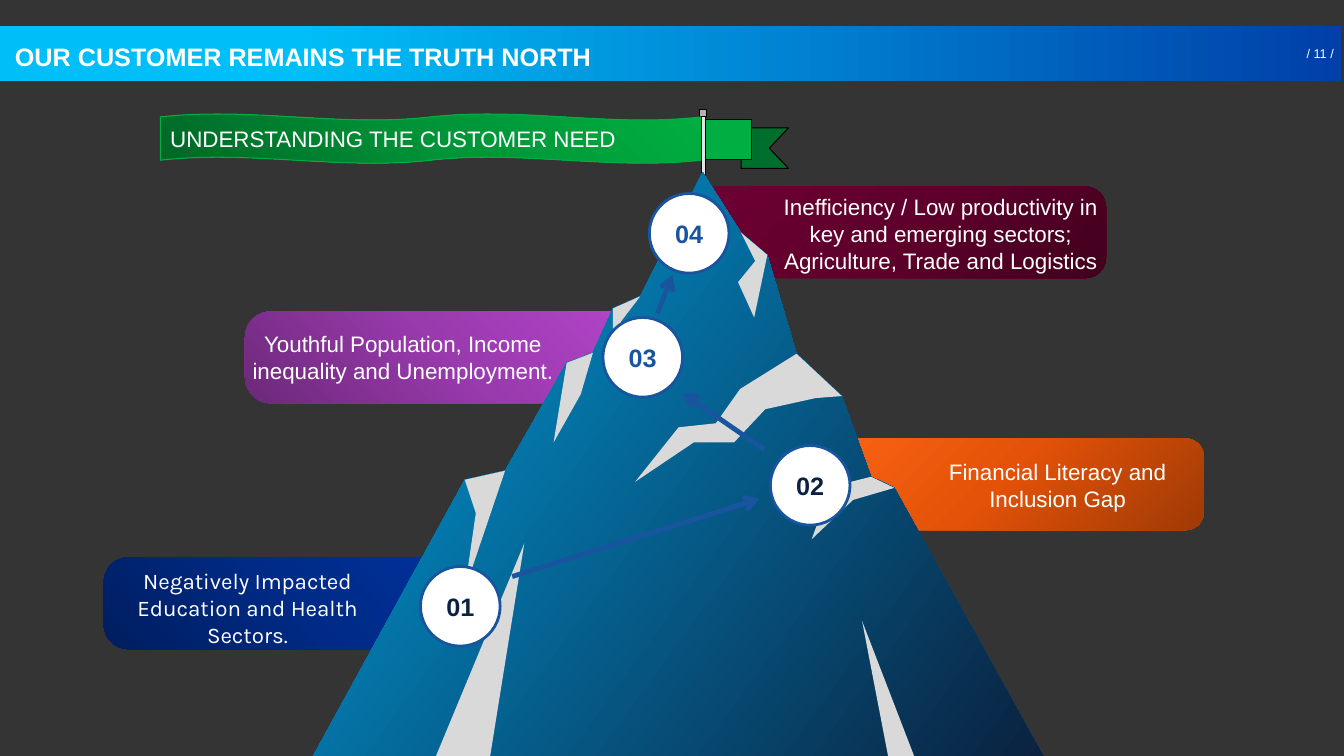
from dataclasses import dataclass

from lxml import etree
from pptx import Presentation
from pptx.dml.color import RGBColor
from pptx.enum.shapes import MSO_CONNECTOR, MSO_SHAPE
from pptx.enum.text import MSO_ANCHOR, PP_ALIGN
from pptx.oxml.ns import qn
from pptx.util import Inches, Pt

RECT = MSO_SHAPE.RECTANGLE
ROUND = MSO_SHAPE.ROUNDED_RECTANGLE
OVAL = MSO_SHAPE.OVAL
WAVE = MSO_SHAPE.DOUBLE_WAVE
STRAIGHT = MSO_CONNECTOR.STRAIGHT
TOP, MIDDLE = MSO_ANCHOR.TOP, MSO_ANCHOR.MIDDLE
LEFT, CENTER = PP_ALIGN.LEFT, PP_ALIGN.CENTER

WHITE, BLACK, SNOW, BLUE, NAVY = "FFFFFF", "000000", "D9D9D9", "19549E", "0A2240"
BOTTOM_LEFT = (0, 100, 100, 0)
BOTTOM_RIGHT = (100, 100, 0, 0)
PANEL_W, PANEL_H = 4.15, 0.91
CIRCLE = 0.79
TITLE = {"name": "Arial", "size": Pt(18), "bold": True}
BODY = {"name": "Arial", "size": Pt(16)}
KARLA = {"name": "Karla", "size": Pt(16)}
SMALL = {"name": "Arial", "size": Pt(9)}

Box = tuple[float, float, float, float]
Point = tuple[float, float]


@dataclass
class Gradient:
    stops: list[tuple[int, str]]
    angle: int = 0
    focus: tuple[int, int, int, int] | None = None


@dataclass
class Panel:
    left: float
    top: float
    radius: float
    colors: tuple[str, str, str]
    focus: tuple[int, int, int, int]
    text_box: Box
    runs: list[tuple[str, str]]
    font: dict


@dataclass
class Step:
    label: str
    left: float
    top: float
    color: str


PANELS = [
    Panel(2.43, 3.09, 0.284, ("6C2979", "993AAD", "B645CD"), BOTTOM_LEFT, (2.44, 3.31, 3.11, 0.47),
          [("Youthful Population, Income inequality and Unemployment", WHITE), (".", "CCF4FF")], BODY),
    Panel(7.79, 4.35, 0.197, ("9F3A05", "E35208", "FF6617"), BOTTOM_RIGHT, (9.06, 4.58, 2.86, 0.47),
          [("Financial Literacy and Inclusion Gap", WHITE)], BODY),
    Panel(1.03, 5.53, 0.269, ("001E5F", "002B88", "0033A1"), BOTTOM_LEFT, (1.05, 5.79, 2.81, 0.47),
          [("Negatively Impacted Education and Health Sectors.", WHITE)], KARLA),
    Panel(6.82, 1.85, 0.226, ("42001E", "5E002B", "6F0033"), BOTTOM_RIGHT, (7.68, 2.08, 3.3, 0.47),
          [("Inefficiency / Low productivity in key and emerging sectors; "
            "Agriculture, Trade and Logistics", WHITE)], BODY),
]
STEPS = [
    Step("04", 6.44, 1.92, BLUE),
    Step("03", 5.98, 3.15, BLUE),
    Step("02", 7.64, 4.42, NAVY),
    Step("01", 4.17, 5.62, NAVY),
]
ARROWS = [
    ((5.08, 5.72), (7.53, 4.95)),
    ((7.58, 4.46), (6.77, 3.9)),
    ((6.52, 3.11), (6.67, 2.73)),
]
FLAG_TAIL = [(7.82, 1.67), (7.35, 1.67), (7.35, 1.27), (7.82, 1.27), (7.63, 1.47)]
FLAG_PARTS = [
    ((6.98, 1.19, 0.47, 0.39), "00AE41"),
    ((6.96, 1.14, 0.04, 0.93), "E5E5E5"),
    ((6.94, 1.09, 0.07, 0.07), "B3B3B3"),
]
MOUNTAIN = [(3.1, 7.51), (4.61, 4.76), (5.01, 4.67), (5.62, 3.6), (5.88, 3.5), (6.08, 3.06),
            (6.35, 2.94), (6.97, 1.71), (7.35, 2.31), (7.61, 2.53), (7.9, 3.51), (8.35, 3.93),
            (8.64, 4.73), (8.87, 4.84), (10.35, 7.51)]
SNOW_PATCHES = [
    [(5.2, 5.39), (4.86, 7.51), (4.32, 7.51)],
    [(8.55, 6.16), (9.07, 7.51), (8.81, 7.51)],
    [(5.49, 4.39), (5.62, 3.6), (5.88, 3.5), (5.76, 3.91)],
    [(6.35, 2.94), (6.16, 3.19), (6.08, 3.67), (6.08, 3.06)],
    [(5.01, 4.67), (4.61, 4.76), (4.72, 5.09), (4.61, 5.85)],
    [(6.3, 4.78), (6.73, 4.24), (7.1, 4.2), (7.34, 3.86), (7.9, 3.51), (8.35, 3.93),
     (8.09, 3.95), (7.59, 4.06), (7.28, 4.39), (6.88, 4.39)],
    [(8.05, 5.35), (8.24, 4.83), (8.64, 4.73), (8.87, 4.84), (8.46, 4.96)],
    [(7.48, 3.15), (7.61, 2.53), (7.35, 2.31), (7.49, 2.59), (7.32, 2.8)],
]


def rgb(value: str) -> RGBColor:
    return RGBColor.from_string(value)


def set_gradient(sp, grad: Gradient) -> None:
    sp.fill.gradient()
    el = sp._element.spPr.find(qn("a:gradFill"))
    for child in list(el):
        el.remove(child)
    stops = etree.SubElement(el, qn("a:gsLst"))
    for pos, color in grad.stops:
        gs = etree.SubElement(stops, qn("a:gs"), pos=str(pos * 1000))
        etree.SubElement(gs, qn("a:srgbClr"), val=color)
    if grad.focus:
        radial = etree.SubElement(el, qn("a:path"), {"path": "circle"})
        sides = {k: str(v * 1000) for k, v in zip("ltrb", grad.focus)}
        etree.SubElement(radial, qn("a:fillToRect"), sides)
    else:
        etree.SubElement(el, qn("a:lin"), ang=str(grad.angle * 60000), scaled="0")


def style(sp, fill: str | Gradient, line: str | None = None, width: float = 0.75) -> None:
    sp.shadow.inherit = False
    if isinstance(fill, Gradient):
        set_gradient(sp, fill)
    else:
        sp.fill.solid()
        sp.fill.fore_color.rgb = rgb(fill)
    if line:
        sp.line.color.rgb = rgb(line)
        sp.line.width = Pt(width)
    else:
        sp.line.fill.background()


def add_shape(shapes, kind, box: Box, fill, line: str | None = None, width: float = 0.75):
    sp = shapes.add_shape(kind, *map(Inches, box))
    style(sp, fill, line, width)
    return sp


def add_outline(shapes, points: list[Point], fill, line: str | None = None) -> None:
    start, *rest = [(Inches(x), Inches(y)) for x, y in points]
    builder = shapes.build_freeform(*start, scale=1.0)
    builder.add_line_segments(rest, close=True)
    style(builder.convert_to_shape(), fill, line)


def write(sp, runs: list[tuple[str, str]], font: dict, align=CENTER, anchor=MIDDLE,
          margins: Point = (0, 0)) -> None:
    tf = sp.text_frame
    mx, my = map(Inches, margins)
    frame = {"word_wrap": True, "vertical_anchor": anchor, "margin_left": mx,
             "margin_right": mx, "margin_top": my, "margin_bottom": my}
    for name, value in frame.items():
        setattr(tf, name, value)
    p = tf.paragraphs[0]
    p.alignment = align
    for text, color in runs:
        r = p.add_run()
        r.text = text
        for name, value in font.items():
            setattr(r.font, name, value)
        r.font.color.rgb = rgb(color)


def add_text(shapes, box: Box, runs: list[tuple[str, str]], font: dict, **layout) -> None:
    write(shapes.add_textbox(*map(Inches, box)), runs, font, **layout)


def add_arrow(shapes, start: Point, end: Point) -> None:
    cx = shapes.add_connector(STRAIGHT, *map(Inches, start + end))
    cx.line.color.rgb = rgb(BLUE)
    cx.line.width = Pt(3.5)
    etree.SubElement(cx.line._get_or_add_ln(), qn("a:tailEnd"), type="arrow")
    etree.SubElement(cx._element.spPr, qn("a:effectLst"))


def main() -> None:
    prs = Presentation()
    prs.slide_width, prs.slide_height = Inches(13.33), Inches(7.5)
    s = prs.slides.add_slide(prs.slide_layouts[6])
    s.background.fill.solid()
    s.background.fill.fore_color.rgb = rgb("343434")
    shapes = s.shapes

    add_shape(shapes, RECT, (0, 0.26, 13.3, 0.54), Gradient([(0, "0040A8"), (78, "00BEF7")], 180))
    add_text(shapes, (12.96, 0.43, 0.33, 0.2), [("/ 11 /", WHITE)], SMALL, align=LEFT)
    add_text(shapes, (0.05, 0.36, 12.06, 0.36), [("OUR CUSTOMER REMAINS THE TRUTH NORTH", WHITE)],
             TITLE, align=LEFT, anchor=TOP, margins=(0.1, 0.05))

    flag = shapes.add_group_shape().shapes
    add_outline(flag, FLAG_TAIL, "006E2C", BLACK)
    for box, color in FLAG_PARTS:
        add_shape(flag, RECT, box, color, BLACK)

    for panel in PANELS:
        grad = Gradient(list(zip((0, 50, 100), panel.colors)), focus=panel.focus)
        sp = add_shape(shapes, ROUND, (panel.left, panel.top, PANEL_W, PANEL_H), grad)
        sp.adjustments[0] = panel.radius

    mountain = shapes.add_group_shape().shapes
    add_outline(mountain, MOUNTAIN, Gradient([(0, "00A1E0"), (100, NAVY)], 36))
    for patch in SNOW_PATCHES:
        add_outline(mountain, patch, SNOW)

    for step in STEPS:
        sp = add_shape(shapes, OVAL, (step.left, step.top, CIRCLE, CIRCLE), WHITE, BLUE, 2)
        write(sp, [(step.label, step.color)], TITLE)
    for panel in PANELS:
        add_text(shapes, panel.text_box, panel.runs, panel.font)
    for start, end in ARROWS:
        add_arrow(shapes, start, end)

    greens = Gradient([(0, "006727"), (50, "009337"), (100, "00AE41")], focus=BOTTOM_LEFT)
    banner = add_shape(shapes, WAVE, (1.59, 1.13, 5.36, 0.49), greens, "00AE41")
    write(banner, [("UNDERSTANDING THE CUSTOMER NEED", WHITE)], BODY, align=LEFT, margins=(0.1, 0.05))
    prs.save("out.pptx")


if __name__ == "__main__":
    main()
